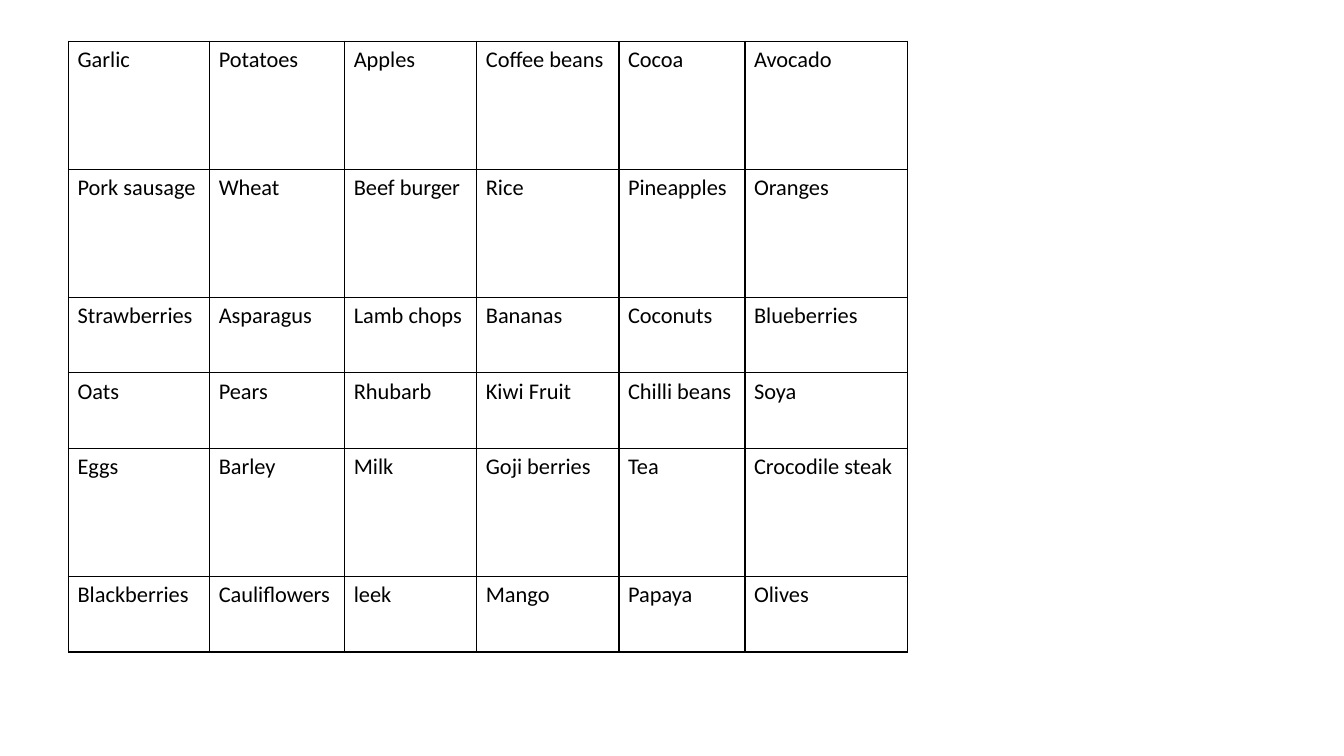
from lxml.etree import SubElement as Sub
from pptx import Presentation
from pptx.dml.color import RGBColor as RGB
from pptx.oxml.ns import qn
from pptx.util import Inches, Pt

FOODS = [
    ("Garlic", "Potatoes", "Apples", "Coffee beans", "Cocoa", "Avocado"),
    ("Pork sausage", "Wheat", "Beef burger", "Rice", "Pineapples", "Oranges"),
    ("Strawberries", "Asparagus", "Lamb chops", "Bananas", "Coconuts", "Blueberries"),
    ("Oats", "Pears", "Rhubarb", "Kiwi Fruit", "Chilli beans", "Soya"),
    ("Eggs", "Barley", "Milk", "Goji berries", "Tea", "Crocodile steak"),
    ("Blackberries", "Cauliflowers", "leek", "Mango", "Papaya", "Olives"),
]
WIDTHS = (1.4, 1.34, 1.31, 1.41, 1.25, 1.61)
TALL, SHORT = 1.27, 0.75
HEIGHTS = (TALL, TALL, SHORT, SHORT, TALL, SHORT)
LEFT, TOP = 0.68, 0.41
COLORS = {"text": "000000", "line": "000000"}


def add_edges(cell):
    props = cell._tc.get_or_add_tcPr()
    for side in ("lnL", "lnR", "lnT", "lnB"):
        line = Sub(props, qn(f"a:{side}"), w=str(Pt(1)))
        fill = Sub(line, qn("a:solidFill"))
        Sub(fill, qn("a:srgbClr"), val=COLORS["line"])


def fill_cell(cell, food):
    add_edges(cell)
    cell.fill.background()
    cell.margin_left = cell.margin_right = Inches(0.09)
    cell.margin_top = cell.margin_bottom = Inches(0.05)
    cell.text = food
    font = cell.text_frame.paragraphs[0].font
    font.name, font.size, font.bold = "Calibri", Pt(16), False
    font.color.rgb = RGB.from_string(COLORS["text"])


deck = Presentation()
deck.slide_width, deck.slide_height = Inches(13.33), Inches(7.5)
slide = deck.slides.add_slide(deck.slide_layouts[6])

# Food table
table = slide.shapes.add_table(
    len(HEIGHTS), len(WIDTHS), Inches(LEFT), Inches(TOP),
    Inches(sum(WIDTHS)), Inches(sum(HEIGHTS))).table
table.first_row = table.horz_banding = False
for col, width in zip(table.columns, WIDTHS):
    col.width = Inches(width)
for row, height, foods in zip(table.rows, HEIGHTS, FOODS):
    row.height = Inches(height)
    for cell, food in zip(row.cells, foods):
        fill_cell(cell, food)

deck.save("out.pptx")
